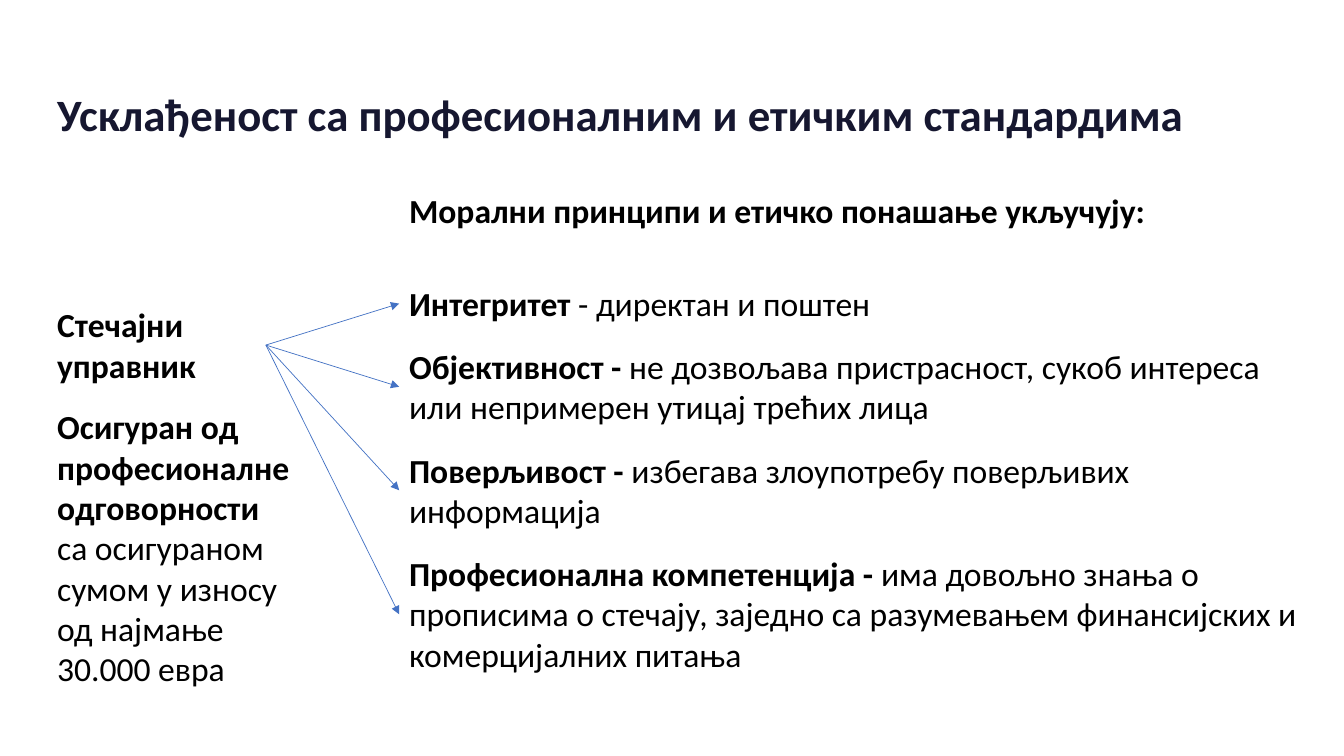
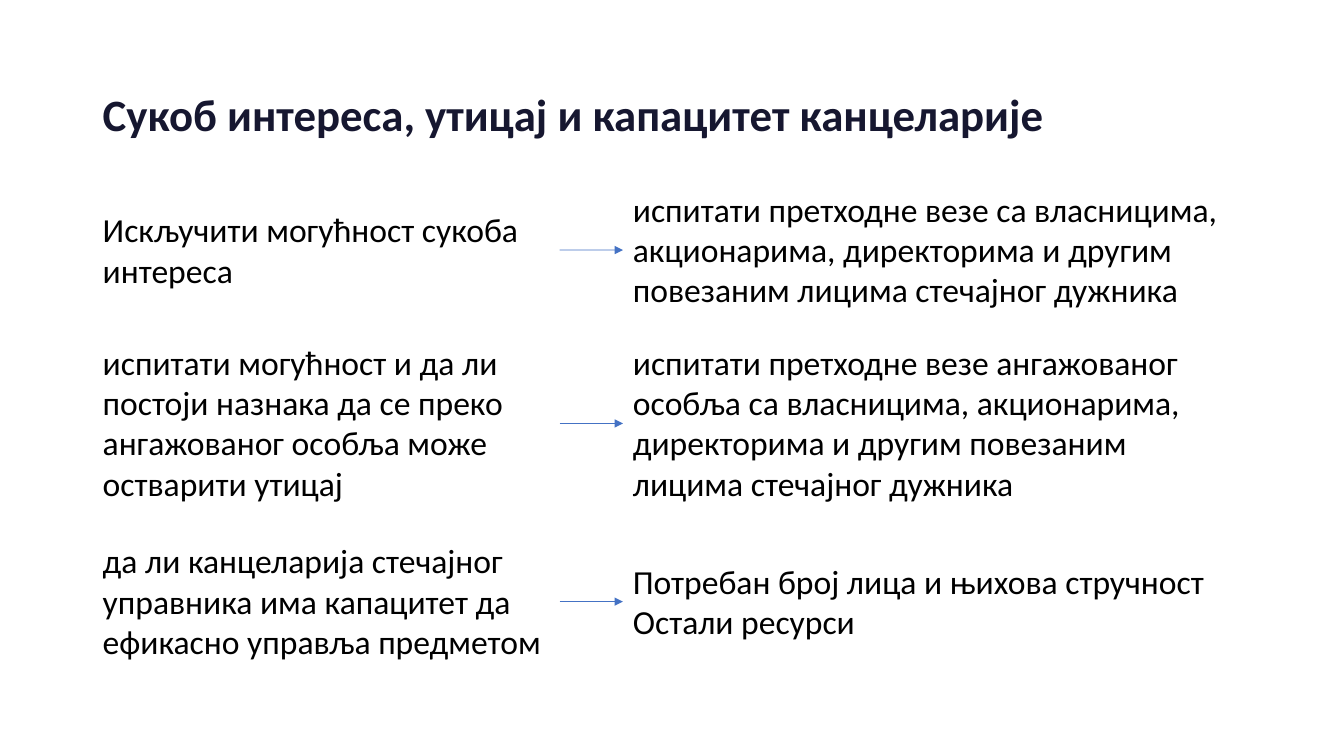
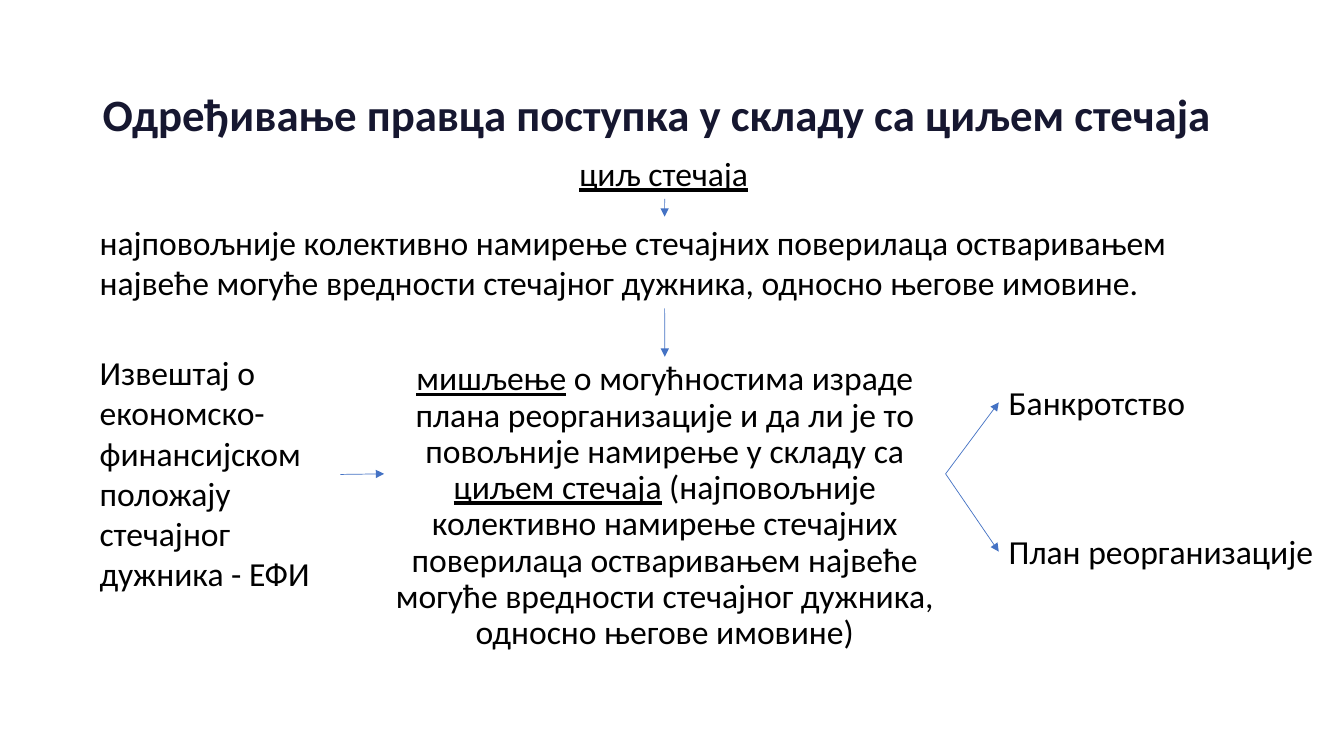
from dataclasses import dataclass
from enum import IntEnum
from typing import NamedTuple

import lxml.etree
import pptx
import pptx.dml.color
import pptx.enum.shapes
import pptx.enum.text
import pptx.oxml.ns
import pptx.presentation
import pptx.shapes.autoshape
import pptx.slide
import pptx.util

Cm = pptx.util.Cm
Pt = pptx.util.Pt
RGBColor = pptx.dml.color.RGBColor
Align = pptx.enum.text.PP_ALIGN
Anchor = pptx.enum.text.MSO_ANCHOR
AutoSize = pptx.enum.text.MSO_AUTO_SIZE
Box = pptx.shapes.autoshape.Shape
Slide = pptx.slide.Slide
qn = pptx.oxml.ns.qn

FONT = "Calibri"
NAVY = RGBColor(0x16, 0x17, 0x30)
BLACK = RGBColor(0x00, 0x00, 0x00)
BLUE = RGBColor(0x44, 0x72, 0xC4)

TITLE_SIZE = 32
TEXT_SIZE = 24
TIGHT = 0.9

# Lengths in centimetres
LINE_HEIGHT = 1.03
INSETS = 0.25
PRINCIPLE_GAP = 0.3


class Side(IntEnum):
    TOP = 0
    LEFT = 1
    BOTTOM = 2
    RIGHT = 3


class Run(NamedTuple):
    text: str
    bold: bool = False
    underline: bool = False


@dataclass(frozen=True)
class Block:
    """A text box; lengths in centimetres."""
    left: float
    top: float
    width: float
    height: float
    paragraphs: list[list[Run]]
    size: int = TEXT_SIZE
    color: RGBColor = BLACK
    align: Align = Align.LEFT
    anchor: Anchor = Anchor.TOP
    spacing: float = 1.0
    wrap: bool = True
    grow: bool = True


@dataclass(frozen=True)
class Principle:
    term: str
    meaning: str
    lines: int


@dataclass(frozen=True)
class Check:
    """A task, and the way to carry it out."""
    task: str
    task_lines: int
    method: list[str]
    method_lines: int
    middle: float


PRINCIPLES = [
    Principle("Интегритет", " - директан и поштен", 1),
    Principle("Објективност -",
              " не дозвољава пристрасност, сукоб интереса или непримерен "
              "утицај трећих лица", 2),
    Principle("Поверљивост - ",
              "избегава злоупотребу поверљивих информација", 2),
    Principle("Професионална компетенција -",
              " има довољно знања о прописима о стечају, заједно са "
              "разумевањем финансијских и комерцијалних питања", 3),
]

CHECKS = [
    Check("Искључити могућност сукоба интереса", 2,
          ["испитати претходне везе са власницима, акционарима, директорима "
           "и другим повезаним лицима стечајног дужника"], 3, 6.3),
    Check("испитати могућност и да ли постоји назнака да се преко "
          "ангажованог особља може остварити утицај", 4,
          ["испитати претходне везе ангажованог особља са власницима, "
           "акционарима, директорима и другим повезаним лицима стечајног "
           "дужника"], 4, 10.67),
    Check("да ли канцеларија стечајног управника има капацитет да ефикасно "
          "управља предметом", 3,
          ["Потребан број лица и њихова стручност", "Остали ресурси"],
          2, 15.16),
]


def height_of(lines: int) -> float:
    return INSETS + LINE_HEIGHT * lines


def add_block(slide: Slide, block: Block) -> Box:
    box = slide.shapes.add_textbox(Cm(block.left), Cm(block.top),
                                   Cm(block.width), Cm(block.height))
    frame = box.text_frame
    frame.word_wrap = block.wrap
    frame.auto_size = (AutoSize.SHAPE_TO_FIT_TEXT if block.grow
                       else AutoSize.NONE)
    frame.vertical_anchor = block.anchor
    for index, runs in enumerate(block.paragraphs):
        paragraph = frame.add_paragraph() if index else frame.paragraphs[0]
        paragraph.alignment = block.align
        paragraph.line_spacing = block.spacing
        for part in runs:
            run = paragraph.add_run()
            run.text = part.text
            run.font.name = FONT
            run.font.size = Pt(block.size)
            run.font.color.rgb = block.color
            run.font.bold = part.bold
            run.font.underline = part.underline
    return box


def add_arrow(slide: Slide, start: Box, start_side: Side,
              end: Box, end_side: Side) -> None:
    arrow = slide.shapes.add_connector(
        pptx.enum.shapes.MSO_CONNECTOR.STRAIGHT, 0, 0, 0, 0)
    arrow.begin_connect(start, int(start_side))
    arrow.end_connect(end, int(end_side))
    arrow.line.color.rgb = BLUE
    arrow.line.width = Pt(0.5)
    lxml.etree.SubElement(arrow.line._get_or_add_ln(), qn("a:tailEnd"),
                          type="triangle")
    lxml.etree.SubElement(arrow._element.spPr, qn("a:effectLst"))


def add_titled_slide(deck: pptx.presentation.Presentation, title: str,
                     left: float = 2.34, width: float = 29.21) -> Slide:
    slide = deck.slides.add_slide(deck.slide_layouts[6])
    add_block(slide, Block(left, 2.18, width, 1.5, [[Run(title, bold=True)]],
                           size=TITLE_SIZE, color=NAVY,
                           anchor=Anchor.BOTTOM, spacing=TIGHT))
    return slide


def build_ethics(deck: pptx.presentation.Presentation) -> None:
    left, principle_left = 1.19, 10.06
    slide = add_titled_slide(
        deck, "Усклађеност са професионалним и етичким стандардима",
        left, 31.9)
    manager = add_block(slide, Block(
        left, 7.54, 5.51, height_of(2),
        [[Run("Стечајни управник", bold=True)]]))
    add_block(slide, Block(
        left, 10.11, 6.53, height_of(7),
        [[Run("Осигуран од професионалне одговорности ", bold=True),
          Run("са осигураном сумом у износу од најмање 30.000 евра")]]))
    add_block(slide, Block(
        principle_left, 4.67, 19.25, height_of(1),
        [[Run("Морални принципи и етичко понашање укључују:", bold=True)]],
        wrap=False))
    top = 7.01
    for principle in PRINCIPLES:
        height = height_of(principle.lines)
        box = add_block(slide, Block(
            principle_left, top, 23.06, height,
            [[Run(principle.term, bold=True), Run(principle.meaning)]]))
        add_arrow(slide, manager, Side.RIGHT, box, Side.LEFT)
        top += height + PRINCIPLE_GAP


def build_conflicts(deck: pptx.presentation.Presentation) -> None:
    slide = add_titled_slide(
        deck, "Сукоб интереса, утицај и капацитет канцеларије")
    for check in CHECKS:
        task_height = height_of(check.task_lines)
        method_height = height_of(check.method_lines)
        task = add_block(slide, Block(
            2.34, check.middle - task_height / 2, 11.76, task_height,
            [[Run(check.task)]]))
        method = add_block(slide, Block(
            15.7, check.middle - method_height / 2, 15.82, method_height,
            [[Run(line)] for line in check.method]))
        add_arrow(slide, task, Side.RIGHT, method, Side.LEFT)


def build_direction(deck: pptx.presentation.Presentation) -> None:
    left, outcome_left = 2.26, 25.17
    slide = add_titled_slide(
        deck, "Одређивање правца поступка у складу са циљем стечаја")
    goal = add_block(slide, Block(
        14.35, 3.73, 4.8, height_of(1),
        [[Run("циљ стечаја", underline=True)]], wrap=False))
    settlement = add_block(slide, Block(
        left, 5.46, 28.98, height_of(2),
        [[Run("најповољније колективно намирење стечајних поверилаца "
              "остваривањем највеће могуће вредности стечајног дужника, "
              "односно његове имовине.")]]))
    report = add_block(slide, Block(
        left, 8.74, 6.32, height_of(6),
        [[Run("Извештај о економско-финансијском положају стечајног "
              "дужника - ЕФИ")]]))
    opinion = add_block(slide, Block(
        9.68, 8.99, 14.15, 5.9,
        [[Run("мишљење", underline=True),
          Run(" о могућностима израде плана реорганизације и да ли је то "
              "повољније намирење у складу са "),
          Run("циљем стечаја", underline=True),
          Run(" (најповољније колективно намирење стечајних поверилаца "
              "остваривањем највеће могуће вредности стечајног дужника, "
              "односно његове имовине)")]],
        align=Align.CENTER, spacing=TIGHT, grow=False))
    bankruptcy = add_block(slide, Block(
        outcome_left, 9.5, 5, height_of(1), [[Run("Банкротство")]],
        wrap=False))
    reorganisation = add_block(slide, Block(
        outcome_left, 13.26, 8.26, height_of(1),
        [[Run("План реорганизације")]], wrap=False))

    add_arrow(slide, goal, Side.BOTTOM, settlement, Side.TOP)
    add_arrow(slide, settlement, Side.BOTTOM, opinion, Side.TOP)
    add_arrow(slide, report, Side.RIGHT, opinion, Side.LEFT)
    for outcome in (bankruptcy, reorganisation):
        add_arrow(slide, opinion, Side.RIGHT, outcome, Side.LEFT)


def main() -> None:
    deck = pptx.Presentation()
    deck.slide_width = Cm(33.87)
    deck.slide_height = Cm(19.05)
    build_ethics(deck)
    build_conflicts(deck)
    build_direction(deck)
    deck.save("out.pptx")


if __name__ == "__main__":
    main()
